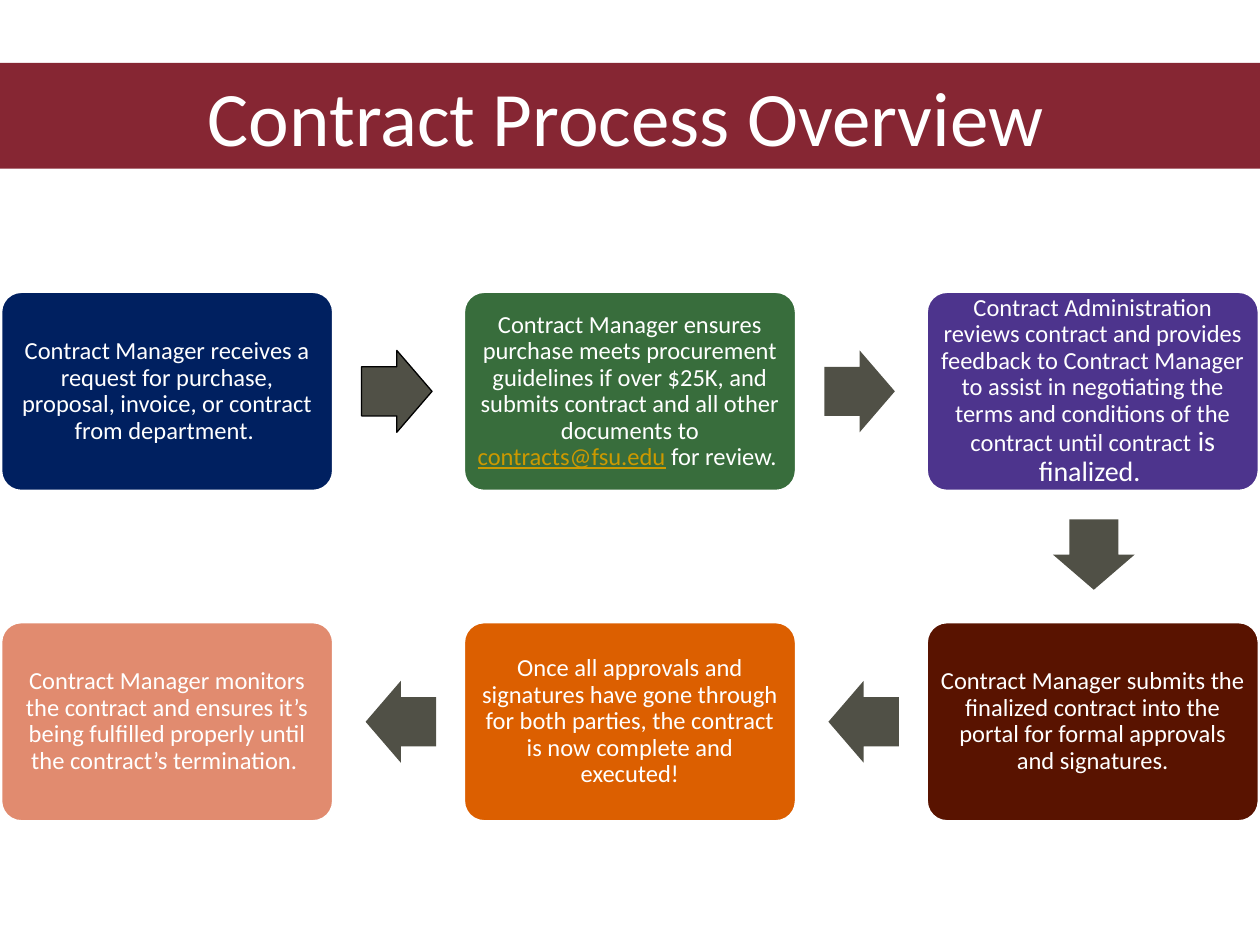
from dataclasses import dataclass

import pptx
import pptx.dml.color
import pptx.enum.shapes
import pptx.enum.text
import pptx.util

Cm = pptx.util.Cm
Pt = pptx.util.Pt
Kind = pptx.enum.shapes.MSO_SHAPE

WHITE = "FFFFFF"
GOLD = "CC9900"
LEFT, TOP = 0.03, 5.89
WIDE, HIGH = 6.68, 4.0
STEP_X, STEP_Y = 9.33, 6.66
LONG, BROAD = 1.42, 1.65


@dataclass
class Run:
    text: str
    size: int = 14
    color: str = WHITE
    under: bool = False


@dataclass
class Step:
    col: int
    row: int
    fill: str
    runs: list[Run]


@dataclass
class Arrow:
    mid_x: float
    mid_y: float
    turn: int = 0
    edge: str = ""


def paint(form, code: str) -> None:
    form.rgb = pptx.dml.color.RGBColor.from_string(code)


def add_form(slide, kind, x: float, y: float, w: float, h: float, fill: str,
             edge: str = "", width: float = 1):
    shape = slide.shapes.add_shape(kind, Cm(x), Cm(y), Cm(w), Cm(h))
    shape.shadow.inherit = False
    shape.fill.solid()
    paint(shape.fill.fore_color, fill)
    if edge:
        shape.line.fill.solid()
        paint(shape.line.color, edge)
        shape.line.width = Pt(width)
    else:
        shape.line.fill.background()
    return shape


def write(shape, runs: list[Run], pad: float, space: float) -> None:
    frame = shape.text_frame
    style = {
        "word_wrap": True,
        "vertical_anchor": pptx.enum.text.MSO_ANCHOR.MIDDLE,
        "margin_left": Cm(pad),
        "margin_right": Cm(pad),
        "margin_top": Cm(pad),
        "margin_bottom": Cm(pad),
    }
    for name, value in style.items():
        setattr(frame, name, value)
    para = frame.paragraphs[0]
    para.alignment = pptx.enum.text.PP_ALIGN.CENTER
    para.line_spacing = space
    for item in runs:
        run = para.add_run()
        run.text = item.text
        face = {"name": "Calibri", "size": Pt(item.size), "underline": item.under}
        for name, value in face.items():
            setattr(run.font, name, value)
        paint(run.font.color, item.color)


def draw_step(slide, step: Step) -> None:
    x, y = LEFT + step.col * STEP_X, TOP + step.row * STEP_Y
    box = add_form(slide, Kind.ROUNDED_RECTANGLE, x, y, WIDE, HIGH, step.fill, WHITE)
    box.adjustments[0] = 0.1
    write(box, step.runs, 0.15, 0.9)


def draw_arrow(slide, arrow: Arrow) -> None:
    x, y = arrow.mid_x - LONG / 2, arrow.mid_y - BROAD / 2
    shape = add_form(slide, Kind.RIGHT_ARROW, x, y, LONG, BROAD, "505046", arrow.edge, 0.75)
    shape.adjustments[0] = 0.6
    shape.adjustments[1] = 0.5
    shape.rotation = arrow.turn


STEPS = [
    Step(0, 0, "002060", [Run(
        "Contract Manager receives a request for purchase, proposal, invoice, "
        "or contract from department. ")]),
    Step(1, 0, "386D3C", [
        Run("Contract Manager ensures purchase meets procurement guidelines "
            "if over $25K, and submits contract and all other documents to "),
        Run("contracts@fsu.edu", color=GOLD, under=True),
        Run(" for review. ")]),
    Step(2, 0, "4D348D", [
        Run("Contract Administration reviews contract and provides feedback to "
            "Contract Manager to assist in negotiating the terms and conditions "
            "of the contract until contract"),
        Run(" is finalized. ", 16)]),
    Step(2, 1, "591300", [Run(
        "Contract Manager submits the finalized contract into the portal "
        "for formal approvals and signatures.")]),
    Step(1, 1, "DC5F00", [Run(
        "Once all approvals and signatures have gone through for both parties, "
        "the contract is now complete and executed!")]),
    Step(0, 1, "E18B6F", [Run(
        "Contract Manager monitors the contract and ensures it’s being fulfilled "
        "properly until the contract’s termination. ")]),
]

MID = TOP + HIGH / 2
ARROWS = [
    Arrow(8, MID, edge="000000"),
    Arrow(8 + STEP_X, MID),
    Arrow(22.05, 11.18, 90),
    Arrow(8.08 + STEP_X, MID + STEP_Y, 180),
    Arrow(8.08, MID + STEP_Y, 180),
]


def main() -> None:
    deck = pptx.Presentation()
    deck.slide_width, deck.slide_height = Cm(25.4), Cm(19.05)
    slide = deck.slides.add_slide(deck.slide_layouts[6])
    for step in STEPS:
        draw_step(slide, step)
    for arrow in ARROWS:
        draw_arrow(slide, arrow)
    bar = add_form(slide, Kind.RECTANGLE, 0, 1.27, 25.6, 2.13, "862633")
    write(bar, [Run("Contract Process Overview ", 44)], 0.13, 1.0)
    deck.save("out.pptx")


if __name__ == "__main__":
    main()
